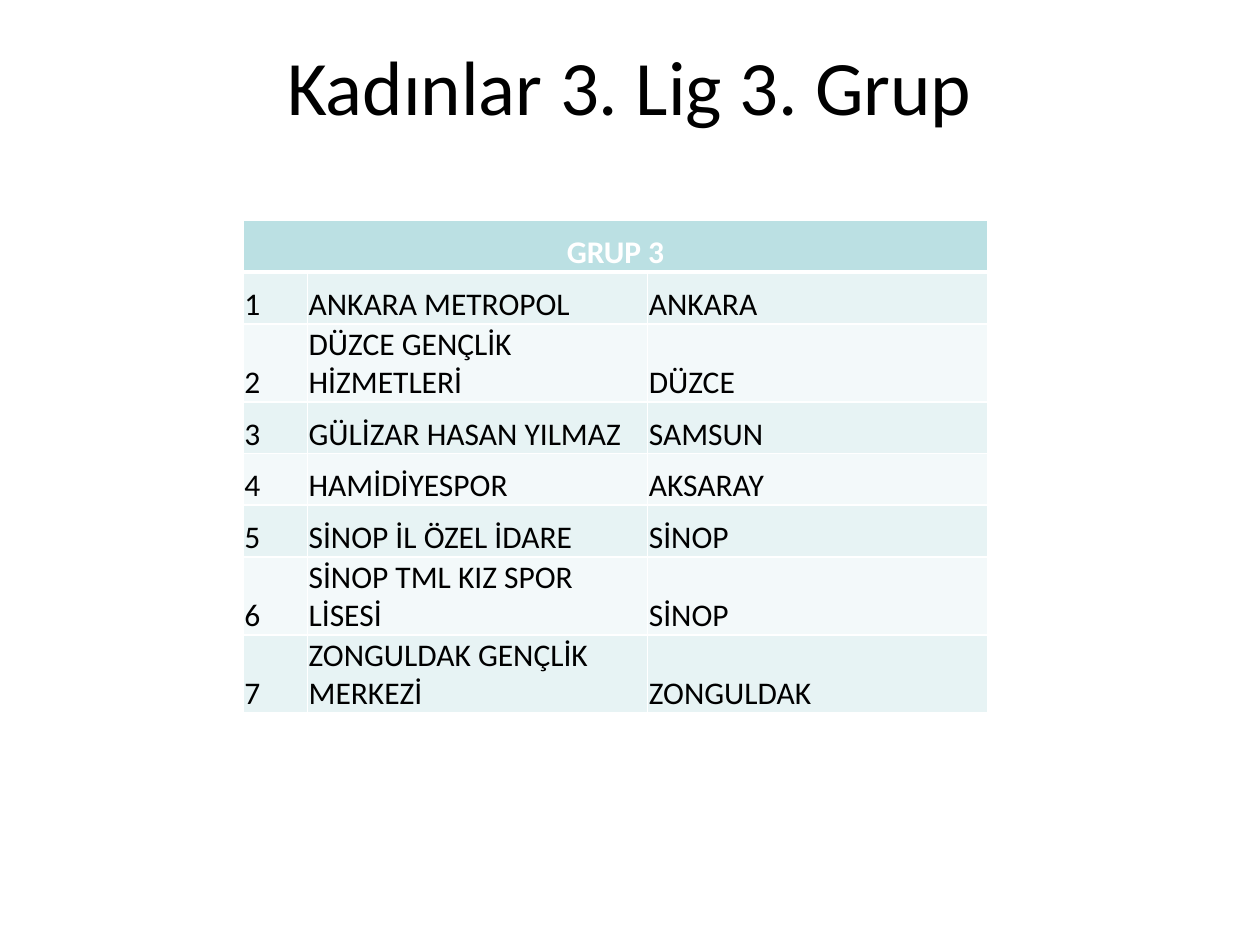
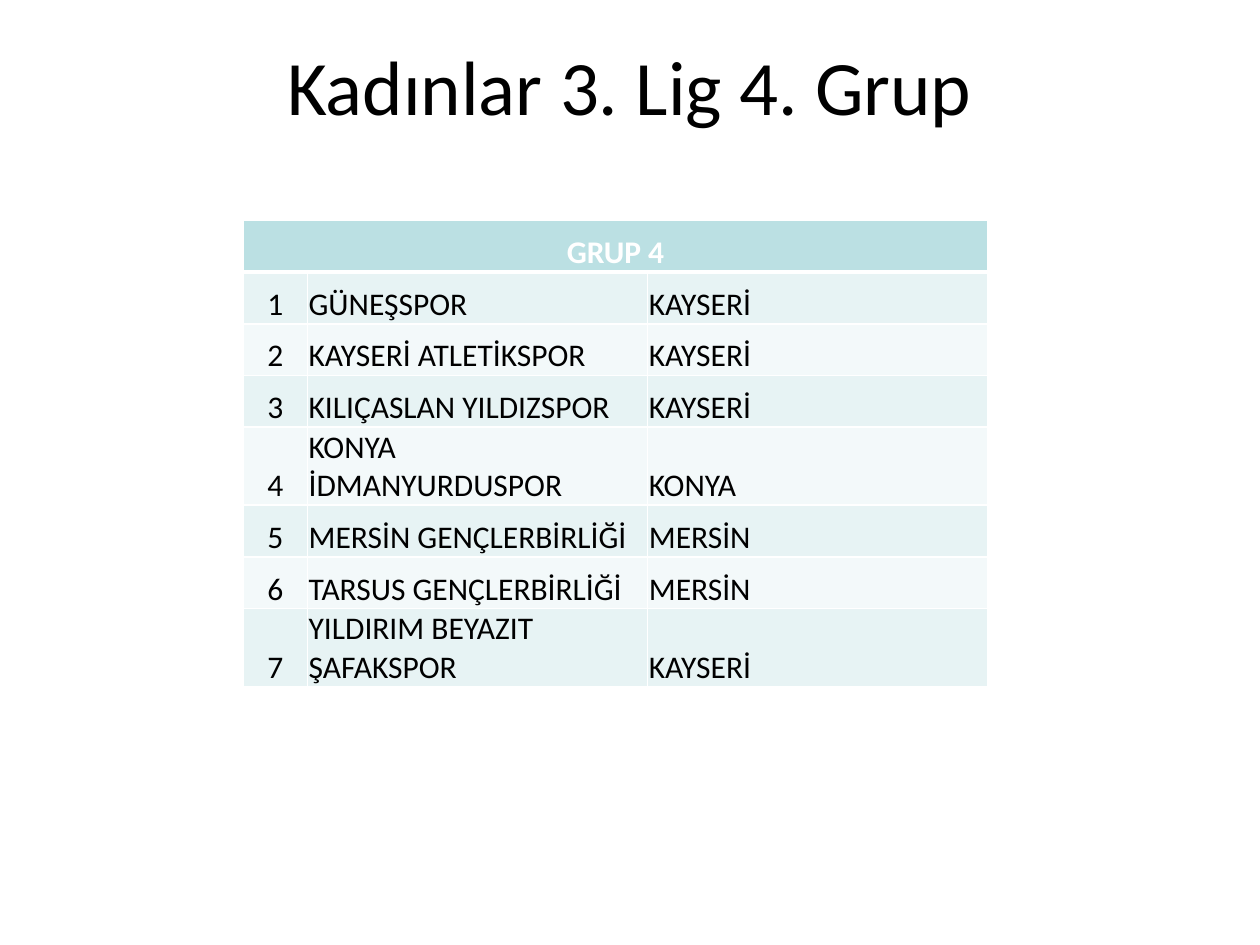
import pptx
import pptx.dml.color
import pptx.enum.text
import pptx.oxml.ns
import pptx.util
from lxml import etree

Inches = pptx.util.Inches
Pt = pptx.util.Pt
RGBColor = pptx.dml.color.RGBColor
ALIGN = pptx.enum.text.PP_ALIGN
ANCHOR = pptx.enum.text.MSO_ANCHOR

BLACK = RGBColor(0x00, 0x00, 0x00)
WHITE = RGBColor(0xFF, 0xFF, 0xFF)
HEADER_FILL = RGBColor(0xBB, 0xE0, 0xE3)
ROW_FILLS = (RGBColor(0xE7, 0xF3, 0xF4), RGBColor(0xF3, 0xF9, 0xFA))
FONT = "Calibri"
COLUMN_WIDTHS = (0.51, 2.7, 2.7)
ROW_HEIGHT = 0.41
THIN, THICK = 1, 3

GROUP_3 = (
    ("ANKARA METROPOL", "ANKARA"),
    ("DÜZCE GENÇLİK HİZMETLERİ", "DÜZCE"),
    ("GÜLİZAR HASAN YILMAZ", "SAMSUN"),
    ("HAMİDİYESPOR", "AKSARAY"),
    ("SİNOP İL ÖZEL İDARE", "SİNOP"),
    ("SİNOP TML KIZ SPOR LİSESİ", "SİNOP"),
    ("ZONGULDAK GENÇLİK MERKEZİ", "ZONGULDAK"),
)
GROUP_4 = (
    ("GÜNEŞSPOR", "KAYSERİ"),
    ("KAYSERİ ATLETİKSPOR", "KAYSERİ"),
    ("KILIÇASLAN YILDIZSPOR", "KAYSERİ"),
    ("KONYA İDMANYURDUSPOR", "KONYA"),
    ("MERSİN GENÇLERBİRLİĞİ", "MERSİN"),
    ("TARSUS GENÇLERBİRLİĞİ", "MERSİN"),
    ("YILDIRIM BEYAZIT ŞAFAKSPOR", "KAYSERİ"),
)


def add_run(paragraph, text, size, color, bold=False):
    """Add one formatted run to the paragraph."""
    run = paragraph.add_run()
    run.text = text
    run.font.name = FONT
    run.font.size = Pt(size)
    run.font.color.rgb = color
    run.font.bold = bold


def add_title(slide, text):
    """Place and fill the title placeholder."""
    title = slide.shapes.title
    title.left, title.top = Inches(0.5), Inches(0.05)
    title.width, title.height = Inches(9), Inches(1.25)
    title.text_frame.vertical_anchor = ANCHOR.MIDDLE
    paragraph = title.text_frame.paragraphs[0]
    paragraph.alignment = ALIGN.CENTER
    add_run(paragraph, text, 44, BLACK)


def set_borders(cell, top, bottom):
    """Draw white cell borders with the given top and bottom widths."""
    properties = cell._tc.get_or_add_tcPr()
    widths = {"lnL": THIN, "lnR": THIN, "lnT": top, "lnB": bottom}
    for side, width in widths.items():
        line = etree.SubElement(
            properties, pptx.oxml.ns.qn(f"a:{side}"), w=str(Pt(width)))
        fill = etree.SubElement(line, pptx.oxml.ns.qn("a:solidFill"))
        etree.SubElement(fill, pptx.oxml.ns.qn("a:srgbClr"), val=str(WHITE))


def format_cell(cell, fill_color, top=THIN, bottom=THIN):
    """Set the borders, fill, margins and anchor of a cell."""
    set_borders(cell, top, bottom)
    cell.fill.solid()
    cell.fill.fore_color.rgb = fill_color
    cell.margin_left = cell.margin_right = cell.margin_top = Inches(0.01)
    cell.margin_bottom = 0
    cell.vertical_anchor = ANCHOR.BOTTOM


def add_group_table(slide, heading, teams, number_alignment):
    """Add the table of numbered teams and their cities."""
    row_count = len(teams) + 1
    table = slide.shapes.add_table(
        row_count, len(COLUMN_WIDTHS), Inches(1.93), Inches(1.75),
        Inches(sum(COLUMN_WIDTHS)), Inches(ROW_HEIGHT * row_count)).table
    for column, width in zip(table.columns, COLUMN_WIDTHS):
        column.width = Inches(width)
    for row in table.rows:
        row.height = Inches(ROW_HEIGHT)

    for cell in table.rows[0].cells:
        format_cell(cell, HEADER_FILL, bottom=THICK)
    header = table.cell(0, 0)
    header.merge(table.cell(0, len(COLUMN_WIDTHS) - 1))
    paragraph = header.text_frame.paragraphs[0]
    paragraph.alignment = ALIGN.CENTER
    add_run(paragraph, heading, 18, WHITE, bold=True)

    alignments = (number_alignment, ALIGN.LEFT, ALIGN.LEFT)
    for number, (team, city) in enumerate(teams, start=1):
        top = THICK if number == 1 else THIN
        for column, text in enumerate((str(number), team, city)):
            cell = table.cell(number, column)
            format_cell(cell, ROW_FILLS[(number - 1) % 2], top=top)
            paragraph = cell.text_frame.paragraphs[0]
            paragraph.alignment = alignments[column]
            add_run(paragraph, text, 18, BLACK)


def main():
    """Build one slide for each group and save the presentation."""
    presentation = pptx.Presentation()
    presentation.slide_width = Inches(10)
    presentation.slide_height = Inches(7.5)
    groups = ((3, GROUP_3, ALIGN.LEFT), (4, GROUP_4, ALIGN.CENTER))
    for group, teams, number_alignment in groups:
        slide = presentation.slides.add_slide(presentation.slide_layouts[5])
        add_title(slide, f"Kadınlar 3. Lig {group}. Grup")
        add_group_table(slide, f"GRUP {group}", teams, number_alignment)
    presentation.save("out.pptx")


if __name__ == "__main__":
    main()
